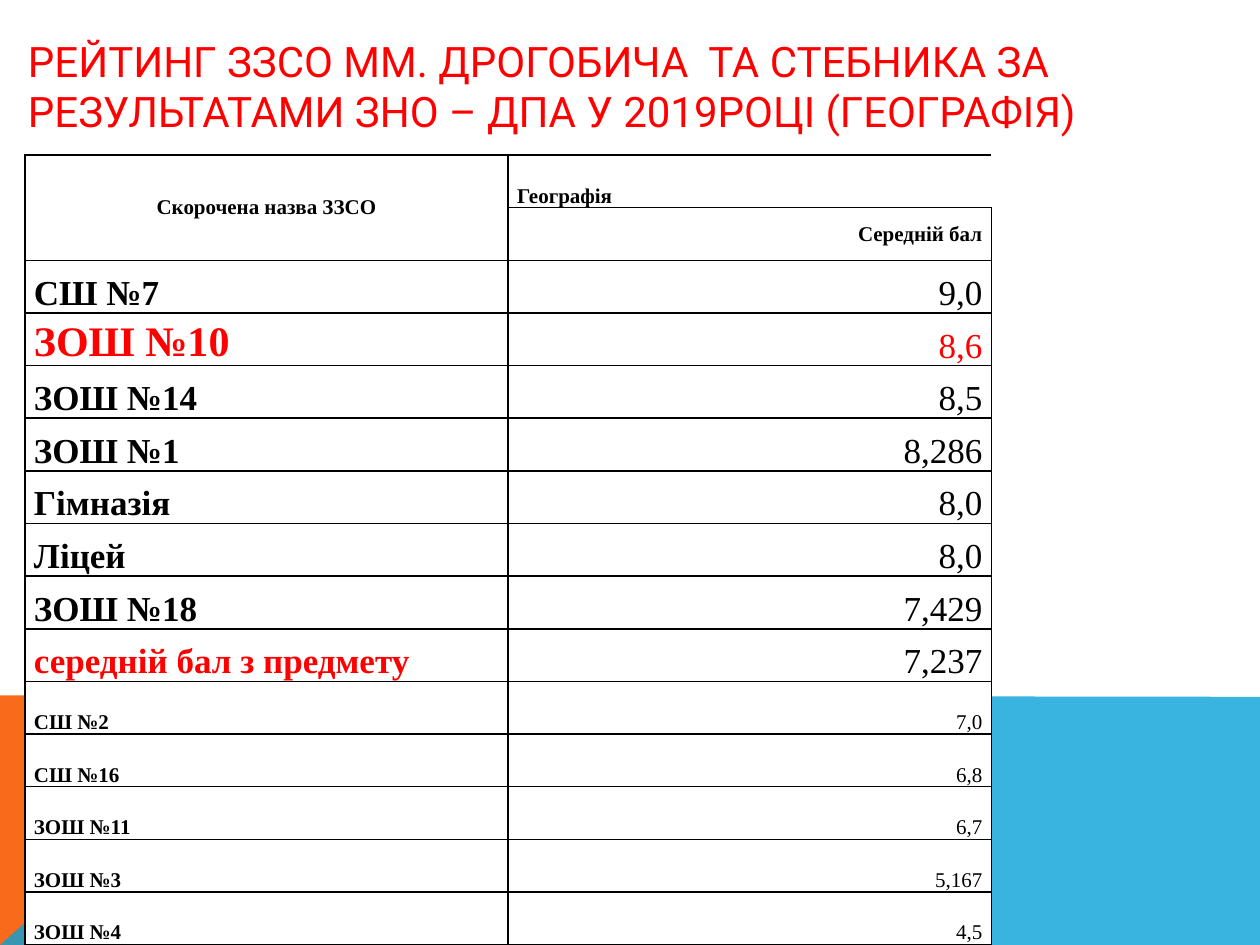
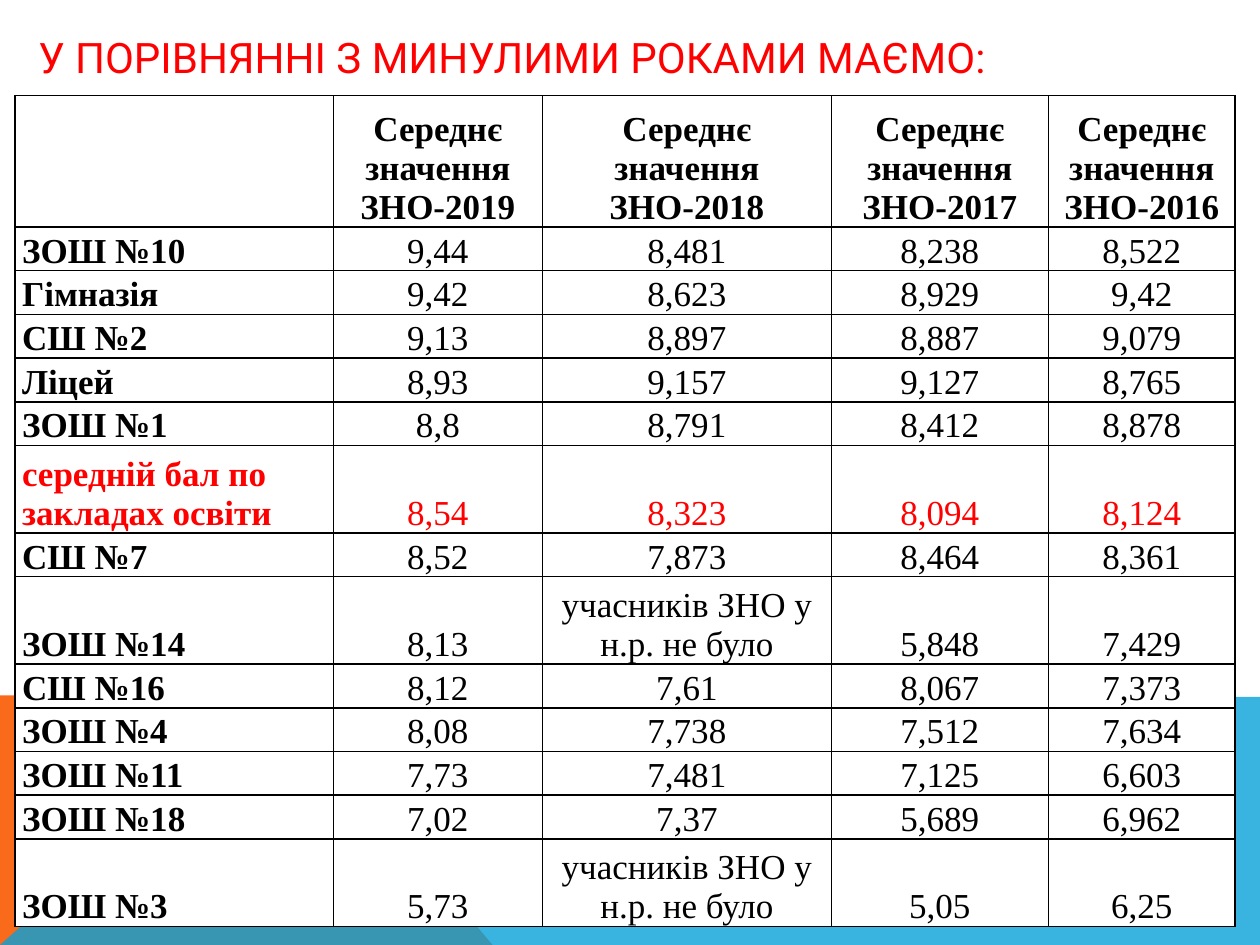
"""Build two slides that rank schools by their exam results."""
from dataclasses import dataclass

from lxml.etree import SubElement
from pptx import Presentation
from pptx.dml.color import RGBColor
from pptx.enum.text import MSO_ANCHOR, MSO_AUTO_SIZE, PP_ALIGN
from pptx.oxml.ns import qn
from pptx.slide import Slide
from pptx.table import Table, _Cell
from pptx.text.text import TextFrame
from pptx.util import Pt

WHITE, BLACK, RED = "FFFFFF", "000000", "FF0000"
ORANGE, BLUE = "F96A1B", "08A1D9"
TITLE_FONT, TABLE_FONT = "Roboto", "Times New Roman"
ALL_SIDES = "LRTB"
NO_ENTRANTS = "учасників ЗНО у н.р. не було"


@dataclass(frozen=True)
class Box:
    """Position and size in points."""
    left: float
    top: float
    width: float
    height: float


@dataclass(frozen=True)
class Band:
    """Coloured outline at the foot of a slide."""
    points: tuple[tuple[float, float], ...]
    color: str
    opacity: int = 100


@dataclass(frozen=True)
class SchoolRow:
    """One school with its scores and the format of its row."""
    name: str
    scores: tuple[str, ...]
    size: float = 20
    name_size: float | None = None
    name_color: str = BLACK
    score_color: str = BLACK
    height: float = 25


BANDS = (
    Band(((0, 540), (0, 397.4), (160.6, 397.4), (281.5, 540)), ORANGE),
    Band(((0, 540), (160.6, 397.4), (720, 398.2), (720, 540)), BLUE, 80),
)

RATING_ROW_HEIGHT = 30.1
RATING = (
    SchoolRow("СШ №7", ("9,0",)),
    SchoolRow("ЗОШ №10", ("8,6",), name_size=24, name_color=RED, score_color=RED),
    SchoolRow("ЗОШ №14", ("8,5",)),
    SchoolRow("ЗОШ №1", ("8,286",)),
    SchoolRow("Гімназія", ("8,0",)),
    SchoolRow("Ліцей", ("8,0",)),
    SchoolRow("ЗОШ №18", ("7,429",)),
    SchoolRow("середній бал з предмету", ("7,237",), name_color=RED),
    SchoolRow("СШ №2", ("7,0",), size=12),
    SchoolRow("СШ №16", ("6,8",), size=12),
    SchoolRow("ЗОШ №11", ("6,7",), size=12),
    SchoolRow("ЗОШ №3", ("5,167",), size=12),
    SchoolRow("ЗОШ №4", ("4,5",), size=12),
)

YEARS = (2019, 2018, 2017, 2016)
COMPARISON_HEADER_HEIGHT = 75
COMPARISON = (
    SchoolRow("ЗОШ №10", ("9,44", "8,481", "8,238", "8,522")),
    SchoolRow("Гімназія", ("9,42", "8,623", "8,929", "9,42")),
    SchoolRow("СШ №2", ("9,13", "8,897", "8,887", "9,079")),
    SchoolRow("Ліцей", ("8,93", "9,157", "9,127", "8,765")),
    SchoolRow("ЗОШ №1", ("8,8", "8,791", "8,412", "8,878")),
    SchoolRow("середній бал по закладах освіти", ("8,54", "8,323", "8,094", "8,124"),
              name_color=RED, score_color=RED, height=50),
    SchoolRow("СШ №7", ("8,52", "7,873", "8,464", "8,361")),
    SchoolRow("ЗОШ №14", ("8,13", NO_ENTRANTS, "5,848", "7,429"), height=50),
    SchoolRow("СШ №16", ("8,12", "7,61", "8,067", "7,373")),
    SchoolRow("ЗОШ №4", ("8,08", "7,738", "7,512", "7,634")),
    SchoolRow("ЗОШ №11", ("7,73", "7,481", "7,125", "6,603")),
    SchoolRow("ЗОШ №18", ("7,02", "7,37", "5,689", "6,962")),
    SchoolRow("ЗОШ №3", ("5,73", NO_ENTRANTS, "5,05", "6,25"), height=50),
)


def rgb(color: str) -> RGBColor:
    """Turn a hex string into a colour."""
    return RGBColor.from_string(color)


def write_text(frame: TextFrame, text: str, *, font: str = TABLE_FONT, size: float = 20,
               color: str = BLACK, bold: bool = False,
               align: PP_ALIGN = PP_ALIGN.LEFT) -> None:
    """Write one formatted paragraph into a text frame."""
    paragraph = frame.paragraphs[0]
    paragraph.alignment = align
    run = paragraph.add_run()
    run.text = text
    run.font.name = font
    run.font.size = Pt(size)
    run.font.bold = bold
    run.font.color.rgb = rgb(color)


def draw_band(slide: Slide, band: Band) -> None:
    """Draw one closed band with its opacity."""
    start, *others = [(Pt(x), Pt(y)) for x, y in band.points]
    builder = slide.shapes.build_freeform(*start, scale=1.0)
    builder.add_line_segments(others, close=True)
    shape = builder.convert_to_shape()
    shape.shadow.inherit = False
    shape.line.fill.background()
    shape.fill.solid()
    shape.fill.fore_color.rgb = rgb(band.color)
    if band.opacity < 100:
        color = shape._element.spPr.find(qn("a:solidFill"))[0]
        SubElement(color, qn("a:alpha"), val=str(band.opacity * 1000))


def add_titled_slide(presentation: Presentation, title: str, box: Box) -> Slide:
    """Add a slide with the shared bands and title style."""
    slide = presentation.slides.add_slide(presentation.slide_layouts.get_by_name("Title Only"))
    for band in BANDS:
        draw_band(slide, band)
    shape = slide.shapes.title
    shape.left, shape.top = Pt(box.left), Pt(box.top)
    shape.width, shape.height = Pt(box.width), Pt(box.height)
    frame = shape.text_frame
    frame.word_wrap = True
    frame.auto_size = MSO_AUTO_SIZE.NONE
    frame.vertical_anchor = MSO_ANCHOR.MIDDLE
    write_text(frame, title, font=TITLE_FONT, size=24, color=RED)
    return slide


def style_cell(cell: _Cell, inset: float, sides: str = ALL_SIDES) -> None:
    """Give a cell its borders, white fill, insets and bottom anchor."""
    properties = cell._tc.get_or_add_tcPr()
    for side in ALL_SIDES:
        line = SubElement(properties, qn(f"a:ln{side}"), w=str(Pt(1)))
        if side in sides:
            fill = SubElement(line, qn("a:solidFill"))
            SubElement(fill, qn("a:srgbClr"), val=BLACK)
        else:
            SubElement(line, qn("a:noFill"))
    cell.fill.solid()
    cell.fill.fore_color.rgb = rgb(WHITE)
    cell.margin_left = cell.margin_right = Pt(inset)
    cell.margin_top = cell.margin_bottom = 0
    cell.vertical_anchor = MSO_ANCHOR.BOTTOM


def add_grid(slide: Slide, left: float, top: float, widths: list[float],
             heights: list[float], inset: float, open_cell: tuple[int, int] | None = None) -> Table:
    """Add a bordered table; the open cell has no right border."""
    table = slide.shapes.add_table(len(heights), len(widths), Pt(left), Pt(top),
                                   Pt(sum(widths)), Pt(sum(heights))).table
    table.first_row = table.horz_banding = False
    for column, width in zip(table.columns, widths):
        column.width = Pt(width)
    for row_index, height in enumerate(heights):
        table.rows[row_index].height = Pt(height)
        for column_index in range(len(widths)):
            is_open = (row_index, column_index) == open_cell
            style_cell(table.cell(row_index, column_index), inset, "LTB" if is_open else ALL_SIDES)
    return table


def fill_school_rows(table: Table, schools: tuple[SchoolRow, ...], first_row: int,
                     score_align: PP_ALIGN) -> None:
    """Write the schools and their scores below the header."""
    for row_index, school in enumerate(schools, first_row):
        write_text(table.cell(row_index, 0).text_frame, school.name, bold=True,
                   size=school.name_size or school.size, color=school.name_color)
        for column_index, score in enumerate(school.scores, 1):
            write_text(table.cell(row_index, column_index).text_frame, score,
                       size=school.size, color=school.score_color, align=score_align)


def build_rating_slide(presentation: Presentation) -> None:
    """Build the geography rating."""
    slide = add_titled_slide(
        presentation,
        "РЕЙТИНГ ЗЗСО ММ. ДРОГОБИЧА  ТА СТЕБНИКА ЗА РЕЗУЛЬТАТАМИ ЗНО – ДПА У 2019РОЦІ (ГЕОГРАФІЯ)",
        Box(8.8, 9.4, 702.7, 79.2))
    heights = [RATING_ROW_HEIGHT] * (len(RATING) + 2)
    table = add_grid(slide, 14.2, 88.6, [276.2] * 2, heights, 5.2, open_cell=(0, 1))
    school, subject, average = table.cell(0, 0), table.cell(0, 1), table.cell(1, 1)
    school.merge(table.cell(1, 0))
    school.vertical_anchor = average.vertical_anchor = MSO_ANCHOR.MIDDLE
    for cell, text, align in ((school, "Скорочена назва ЗЗСО", PP_ALIGN.CENTER),
                              (subject, "Географія", PP_ALIGN.LEFT),
                              (average, "Середній бал", PP_ALIGN.RIGHT)):
        write_text(cell.text_frame, text, size=12, bold=True, align=align)
    fill_school_rows(table, RATING, 2, PP_ALIGN.RIGHT)


def build_comparison_slide(presentation: Presentation) -> None:
    """Build the comparison with earlier years."""
    slide = add_titled_slide(presentation, "У ПОРІВНЯННІ З МИНУЛИМИ РОКАМИ МАЄМО:",
                             Box(14.7, 9.4, 697.7, 45.4))
    heights = [COMPARISON_HEADER_HEIGHT, *(school.height for school in COMPARISON)]
    table = add_grid(slide, 8.6, 54.7, [181.9, 119.5, 165.1, 124, 106.8], heights, 4)
    for column_index, year in enumerate(YEARS, 1):
        write_text(table.cell(0, column_index).text_frame, f"Середнє значення ЗНО-{year}",
                   bold=True, align=PP_ALIGN.CENTER)
    fill_school_rows(table, COMPARISON, 1, PP_ALIGN.CENTER)


def main() -> None:
    """Build and save the presentation."""
    presentation = Presentation()
    presentation.slide_width, presentation.slide_height = Pt(720), Pt(540)
    build_rating_slide(presentation)
    build_comparison_slide(presentation)
    presentation.save("out.pptx")


if __name__ == "__main__":
    main()
